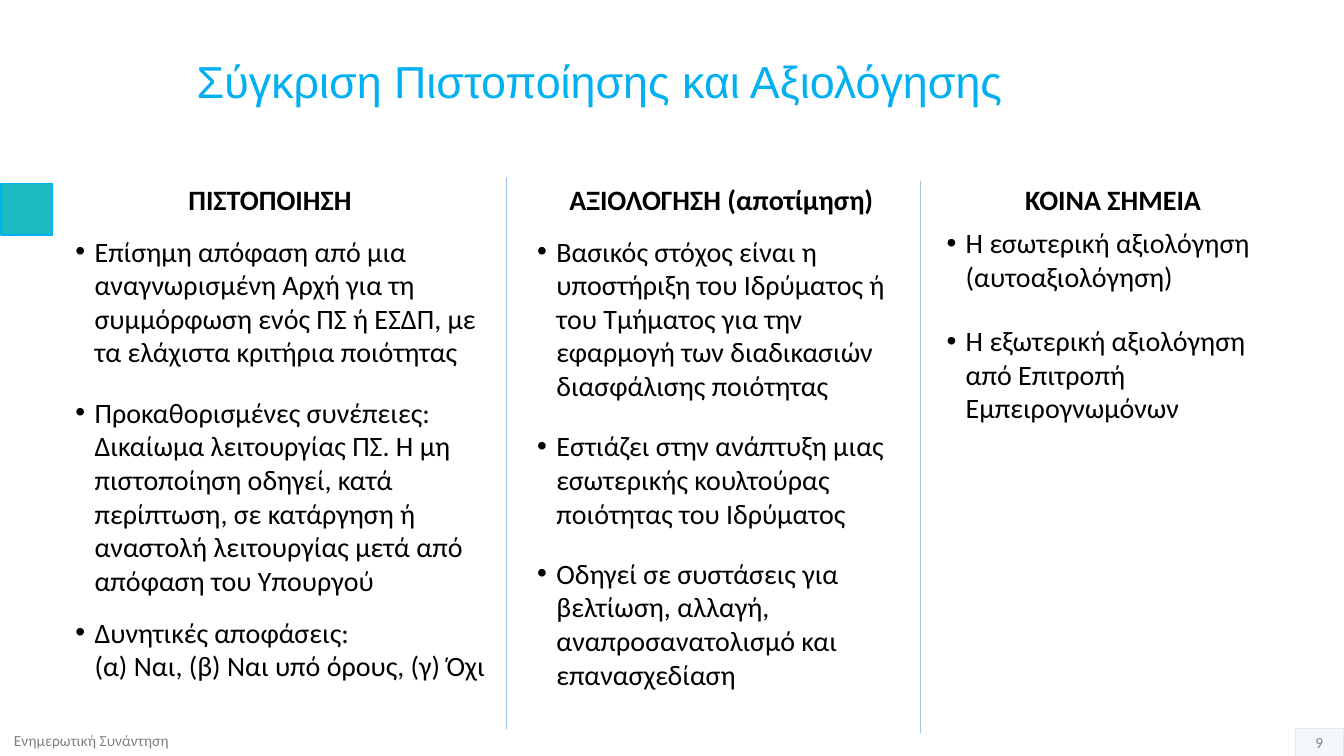
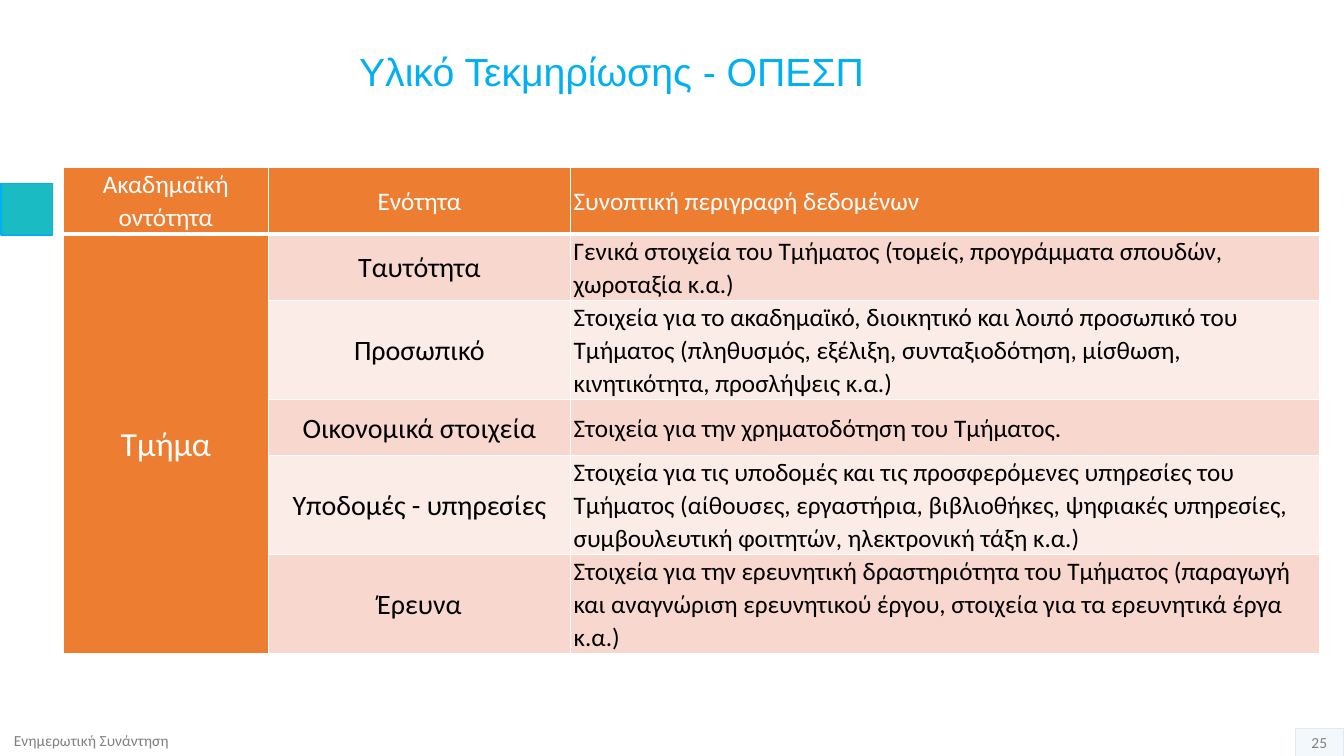
from lxml.etree import SubElement
from pptx import Presentation
from pptx.dml.color import RGBColor
from pptx.enum.shapes import MSO_CONNECTOR, MSO_SHAPE
from pptx.enum.text import MSO_ANCHOR, PP_ALIGN
from pptx.oxml.ns import qn
from pptx.util import Inches, Pt

COLOURS = {
    "title": "00B0F0", "marker": "1BBBC3", "footer": "808080", "badge": "DEEBF7",
    "divider": "9DC3E6", "text": "000000", "white": "FFFFFF",
    "header": "ED7D31", "band_dark": "F8D7CE", "band_light": "FCECE8",
}
BODY_FONT, TITLE_FONT = "Calibri", "Arial"
FOOTER = "Ενημερωτική Συνάντηση"
HANG = Inches(0.19)

# Each column: left, width, heading indent (None = centred), heading, (space before, bullet)
COLUMNS = [
    (0.65, 4.37, 1.12, "ΠΙΣΤΟΠΟΙΗΣΗ", [
        (13, "Επίσημη απόφαση από μια αναγνωρισμένη Αρχή για τη συμμόρφωση ενός ΠΣ ή "
             "ΕΣΔΠ, με τα ελάχιστα κριτήρια ποιότητας"),
        (19, "Προκαθορισμένες συνέπειες: Δικαίωμα λειτουργίας ΠΣ. Η μη πιστοποίηση "
             "οδηγεί, κατά περίπτωση, σε κατάργηση ή αναστολή λειτουργίας μετά από "
             "απόφαση του Υπουργού"),
        (13, "Δυνητικές αποφάσεις:\n(α) Ναι, (β) Ναι υπό όρους, (γ) Όχι"),
    ]),
    (5.23, 3.85, None, "ΑΞΙΟΛΟΓΗΣΗ (αποτίμηση)", [
        (13, "Βασικός στόχος είναι η υποστήριξη του Ιδρύματος ή του Τμήματος για την "
             "εφαρμογή των διαδικασιών διασφάλισης ποιότητας"),
        (19, "Εστιάζει στην ανάπτυξη μιας εσωτερικής κουλτούρας ποιότητας του Ιδρύματος"),
        (19, "Οδηγεί σε συστάσεις για βελτίωση, αλλαγή, αναπροσανατολισμό και "
             "επανασχεδίαση"),
    ]),
    (9.29, 3.5, None, "ΚΟΙΝΑ ΣΗΜΕΙΑ", [
        (7, "Η εσωτερική αξιολόγηση (αυτοαξιολόγηση)"),
        (22, "Η εξωτερική αξιολόγηση από Επιτροπή Εμπειρογνωμόνων"),
    ]),
]
DIVIDERS = [(5.02, 1.76), (9.13, 1.8)]
DIVIDER_LENGTH = 5.47

HEADINGS = ["Ακαδημαϊκή οντότητα", "Ενότητα", "Συνοπτική περιγραφή δεδομένων"]
ENTITY = "Τμήμα"
UNITS = [
    ("Ταυτότητα", "Γενικά στοιχεία του Τμήματος (τομείς, προγράμματα σπουδών, "
                  "χωροταξία κ.α.)"),
    ("Προσωπικό", "Στοιχεία για το ακαδημαϊκό, διοικητικό και λοιπό προσωπικό του "
                  "Τμήματος (πληθυσμός, εξέλιξη, συνταξιοδότηση, μίσθωση, κινητικότητα, "
                  "προσλήψεις κ.α.)"),
    ("Οικονομικά στοιχεία", "Στοιχεία για την χρηματοδότηση του Τμήματος."),
    ("Υποδομές - υπηρεσίες", "Στοιχεία για τις υποδομές και τις προσφερόμενες υπηρεσίες "
                             "του Τμήματος (αίθουσες, εργαστήρια, βιβλιοθήκες, ψηφιακές "
                             "υπηρεσίες, συμβουλευτική φοιτητών, ηλεκτρονική τάξη κ.α.)"),
    ("Έρευνα", "Στοιχεία για την ερευνητική δραστηριότητα του Τμήματος (παραγωγή και "
               "αναγνώριση ερευνητικού έργου, στοιχεία για τα ερευνητικά έργα κ.α.)"),
]
COLUMN_WIDTHS = [2.03, 3, 7.43]
ROW_HEIGHTS = [0.66, 0.66, 0.98, 0.56, 0.98, 0.98]


def rgb(name):
    return RGBColor.from_string(COLOURS[name])


def write(para, text, size, colour, font=BODY_FONT, bold=False):
    for number, line in enumerate(text.split("\n")):
        if number:
            para.add_line_break()
        span = para.add_run()
        span.text = line
        span.font.size, span.font.name, span.font.bold = Pt(size), font, bold
        span.font.color.rgb = rgb(colour)


def add_text_box(page, left, top, width, height, anchor=MSO_ANCHOR.TOP):
    box = page.shapes.add_textbox(Inches(left), Inches(top), Inches(width), Inches(height))
    box.text_frame.word_wrap = True
    box.text_frame.vertical_anchor = anchor
    return box.text_frame


def add_rectangle(page, left, top, width, height, fill, line, line_width):
    box = page.shapes.add_shape(MSO_SHAPE.RECTANGLE, Inches(left), Inches(top),
                                Inches(width), Inches(height))
    box.shadow.inherit = False
    box.fill.solid()
    box.fill.fore_color.rgb = rgb(fill)
    box.line.color.rgb = rgb(line)
    box.line.width = Pt(line_width)
    return box


def add_page(deck, number, title, title_size, title_place):
    """Add a slide with the shared marker, footer, page number and title."""
    page = deck.slides.add_slide(deck.slide_layouts[6])
    add_rectangle(page, 0.01, 1.82, 0.51, 0.51, "marker", "title", 1)

    footer = add_text_box(page, 0.04, 7.2, 4.66, 0.3, MSO_ANCHOR.MIDDLE)
    write(footer.paragraphs[0], FOOTER, 11, "footer")

    badge = add_rectangle(page, 12.85, 7.22, 0.47, 0.28, "badge", "badge", 0.25)
    fill_colour = badge.fill._xPr.find(qn("a:solidFill"))[0]
    SubElement(fill_colour, qn("a:alpha"), val="35000")
    frame = badge.text_frame
    frame.margin_top = frame.margin_bottom = 0
    frame.vertical_anchor = MSO_ANCHOR.MIDDLE
    frame.paragraphs[0].alignment = PP_ALIGN.CENTER
    write(frame.paragraphs[0], str(number), 11, "footer")

    para = add_text_box(page, *title_place, MSO_ANCHOR.MIDDLE).paragraphs[0]
    para.alignment = PP_ALIGN.CENTER
    para.line_spacing = 0.9
    write(para, title, title_size, "title", TITLE_FONT)
    return page


def add_column(page, left, width, heading_indent, heading, bullets):
    frame = add_text_box(page, left, 1.76, width, 5.2)
    para = frame.paragraphs[0]
    if heading_indent is None:
        para.alignment = PP_ALIGN.CENTER
    else:
        para._p.get_or_add_pPr().set("marL", str(Inches(heading_indent)))
    write(para, heading, 20, "text", bold=True)
    for space, text in bullets:
        para = frame.add_paragraph()
        para.space_before = Pt(space)
        properties = para._p.get_or_add_pPr()
        properties.set("marL", str(HANG))
        properties.set("indent", str(-HANG))
        SubElement(properties, qn("a:buFont"), typeface="Arial")
        SubElement(properties, qn("a:buChar"), char="•")
        write(para, text, 20, "text")


def add_divider(page, left, top):
    line = page.shapes.add_connector(MSO_CONNECTOR.STRAIGHT, Inches(left), Inches(top),
                                     Inches(left), Inches(top + DIVIDER_LENGTH))
    line.line.color.rgb = rgb("divider")
    line.line.width = Pt(0.5)
    SubElement(line._element.spPr, qn("a:effectLst"))


def style_cell(cell, fill, bottom_width=1):
    properties = cell._tc.get_or_add_tcPr()
    for side, width in (("L", 1), ("R", 1), ("T", 1), ("B", bottom_width)):
        border = SubElement(properties, qn(f"a:ln{side}"), w=str(Pt(width)))
        paint = SubElement(border, qn("a:solidFill"))
        SubElement(paint, qn("a:srgbClr"), val=COLOURS["white"])
    cell.fill.solid()
    cell.fill.fore_color.rgb = rgb(fill)
    cell.vertical_anchor = MSO_ANCHOR.MIDDLE
    cell.margin_left = cell.margin_right = Inches(0.03)
    cell.margin_top = cell.margin_bottom = 0


def fill_cell(cell, text, size, colour, centred):
    para = cell.text_frame.paragraphs[0]
    para.alignment = PP_ALIGN.CENTER if centred else PP_ALIGN.LEFT
    para.line_spacing = 1.07
    write(para, text, size, colour)


def add_unit_table(page):
    table = page.shapes.add_table(len(ROW_HEIGHTS), len(COLUMN_WIDTHS), Inches(0.63),
                                  Inches(1.66), Inches(sum(COLUMN_WIDTHS)),
                                  Inches(sum(ROW_HEIGHTS))).table
    for column, width in zip(table.columns, COLUMN_WIDTHS):
        column.width = Inches(width)
    for row, height in zip(table.rows, ROW_HEIGHTS):
        row.height = Inches(height)

    # Header row
    for index, heading in enumerate(HEADINGS):
        cell = table.cell(0, index)
        style_cell(cell, "header", bottom_width=3)
        fill_cell(cell, heading, 18, "white", centred=index < 2)

    # Unit rows, beside one merged entity cell
    for row, (unit, description) in enumerate(UNITS, start=1):
        band = "band_dark" if row % 2 else "band_light"
        for index, fill in enumerate(("header", band, band)):
            style_cell(table.cell(row, index), fill)
        fill_cell(table.cell(row, 1), unit, 20, "text", centred=True)
        fill_cell(table.cell(row, 2), description, 18, "text", centred=False)
    entity = table.cell(1, 0)
    entity.merge(table.cell(len(UNITS), 0))
    fill_cell(entity, ENTITY, 24, "white", centred=True)


def main():
    deck = Presentation()
    deck.slide_width, deck.slide_height = Inches(13.33), Inches(7.5)

    # Comparison in three columns
    page = add_page(deck, 9, "Σύγκριση Πιστοποίησης και Αξιολόγησης", 32,
                    (0.92, 0.11, 10.06, 1.45))
    for column in COLUMNS:
        add_column(page, *column)
    for left, top in DIVIDERS:
        add_divider(page, left, top)

    # Documentation table
    page = add_page(deck, 25, "Υλικό Τεκμηρίωσης - ΟΠΕΣΠ", 28, (1.14, 0.31, 9.85, 0.84))
    add_unit_table(page)

    deck.save("out.pptx")


if __name__ == "__main__":
    main()
